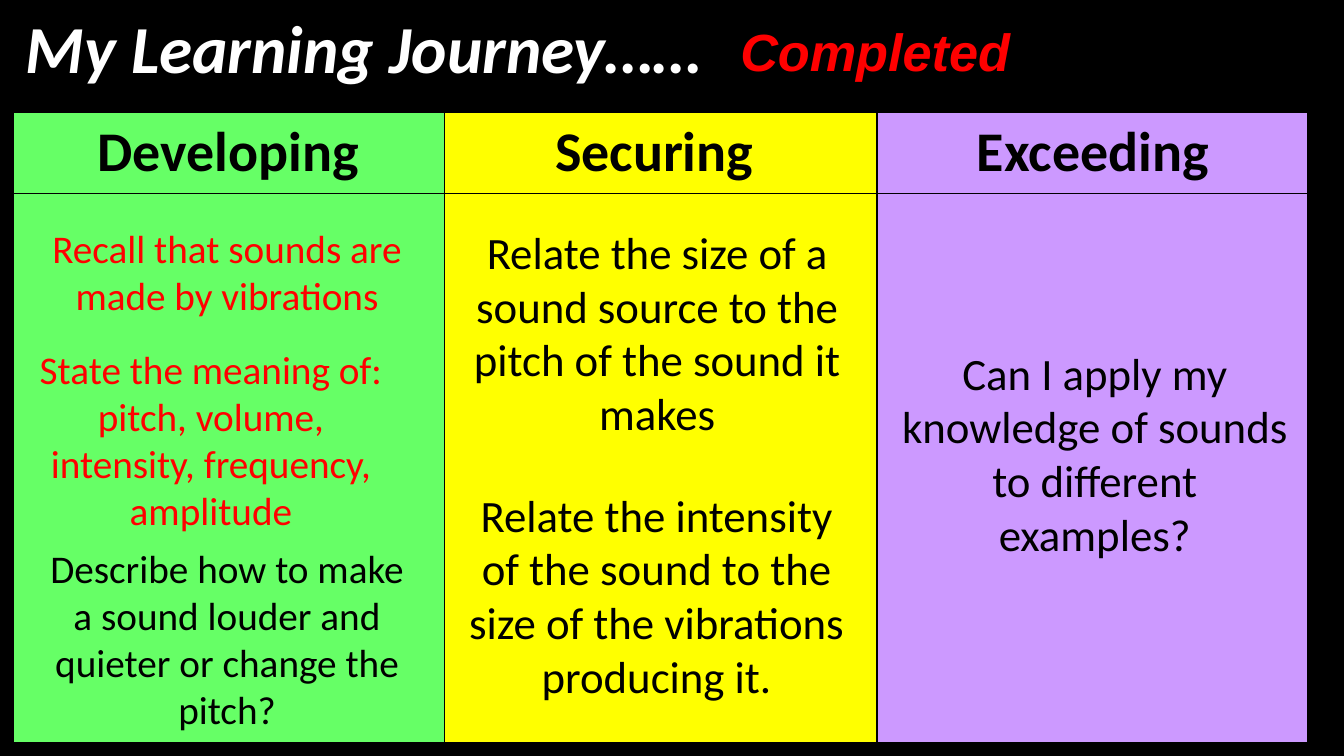
from pptx import Presentation, util as u
from pptx.dml.color import RGBColor
from pptx.enum import text
from pptx.oxml import parse_xml
from pptx.oxml.ns import nsdecls

BLACK = RGBColor(0x00, 0x00, 0x00)
WHITE = RGBColor(0xFF, 0xFF, 0xFF)
RED = RGBColor(0xFF, 0x00, 0x00)
GREEN = RGBColor(0x66, 0xFF, 0x66)
YELLOW = RGBColor(0xFF, 0xFF, 0x00)
PURPLE = RGBColor(0xCC, 0x99, 0xFF)

deck = Presentation()
deck.slide_width = u.Inches(10)
deck.slide_height = deck.slide_width * 9 // 16


def area(left, top, width, height):
    """Turn percentages of the slide's size into lengths."""
    across, down = deck.slide_width / 100, deck.slide_height / 100
    return [round(n) for n in (left * across, top * down, width * across, height * down)]


def write(frame, words, size, color, align, font="Calibri", bold=False, italic=False):
    frame.text = words
    frame.word_wrap = True
    paragraph = frame.paragraphs[0]
    paragraph.alignment = align
    style = paragraph.runs[0].font
    style.name, style.size = font, u.Pt(size)
    style.bold, style.italic = bold, italic
    style.color.rgb = color


LEFT, CENTER = text.PP_ALIGN.LEFT, text.PP_ALIGN.CENTER

slide = deck.slides.add_slide(deck.slide_layouts[5])
slide.background.fill.solid()
slide.background.fill.fore_color.rgb = BLACK

heading = slide.shapes.title
heading.left, heading.top, heading.width, heading.height = area(0.9, 0, 71.8, 25.1)
write(heading.text_frame, "My Learning Journey……", 36, WHITE, LEFT, bold=True, italic=True)
heading.text_frame.vertical_anchor = text.MSO_ANCHOR.TOP
heading.text_frame.auto_size = text.MSO_AUTO_SIZE.NONE

# Three levels, each a heading over an open column
levels = [("Developing", GREEN), ("Securing ", YELLOW), ("Exceeding", PURPLE)]
journey = slide.shapes.add_table(2, len(levels), *area(0.9, 14.75, 96.5, 83.6)).table
journey.rows[0].height = area(0, 0, 0, 10.85)[3]
journey.rows[1].height = area(0, 0, 0, 72.75)[3]

for column, (level, color) in enumerate(levels):
    for row in range(2):
        cell = journey.cell(row, column)
        cell.fill.solid()
        cell.fill.fore_color.rgb = color
        outer = {"L": column == 0, "R": column == 2, "T": row == 0, "B": row == 1}
        for place, (side, is_outer) in enumerate(outer.items()):
            width = u.Pt(2.25 if is_outer else 1)
            cell._tc.get_or_add_tcPr().insert(place, parse_xml(
                f'<a:ln{side} {nsdecls("a")} w="{width}"><a:solidFill>'
                f'<a:srgbClr val="{BLACK}"/></a:solidFill></a:ln{side}>'))
    header = journey.cell(0, column)
    header.vertical_anchor = text.MSO_ANCHOR.MIDDLE
    header.margin_left = header.margin_right = u.Inches(0.07)
    header.margin_top = header.margin_bottom = u.Inches(0.04)
    write(header.text_frame, level, 30, BLACK, CENTER, bold=True)

completed = slide.shapes.add_textbox(*area(54.1, 1.7, 27.3, 10.1))
write(completed.text_frame, "Completed", 28, RED, LEFT, "Arial", bold=True, italic=True)

statements = [
    ("Recall that sounds are made by vibrations", 21, RED, (2.6, 28.85, 28.6, 14.4)),
    ("State the meaning of: pitch, volume, intensity, frequency, amplitude",
     21, RED, (1.4, 44.8, 28.6, 26.85)),
    ("Describe how to make a sound louder and quieter or change the pitch?",
     21, BLACK, (2.1, 71.1, 29.6, 26.85)),
    ("Relate the size of a sound source to the pitch of the sound it makes",
     24, BLACK, (34.1, 28.85, 29.6, 30.6)),
    ("Relate the intensity of the sound to the size of the vibrations producing it.",
     24, BLACK, (33.1, 63.6, 31.5, 30.6)),
    ("Can I apply my knowledge of sounds to different examples?",
     24, BLACK, (65.7, 44.8, 31.5, 30.6)),
]
for words, size, color, place in statements:
    statement = slide.shapes.add_textbox(*area(*place))
    write(statement.text_frame, words, size, color, CENTER)

deck.save("out.pptx")
